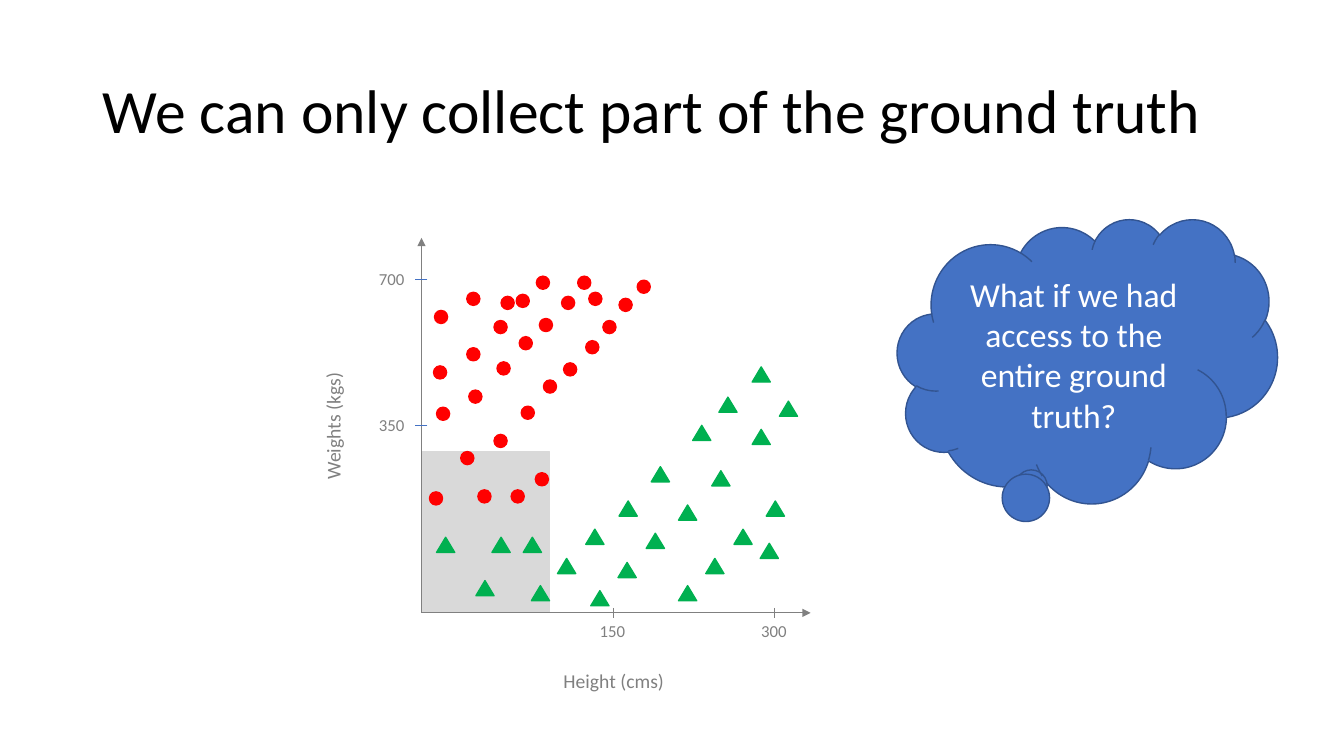
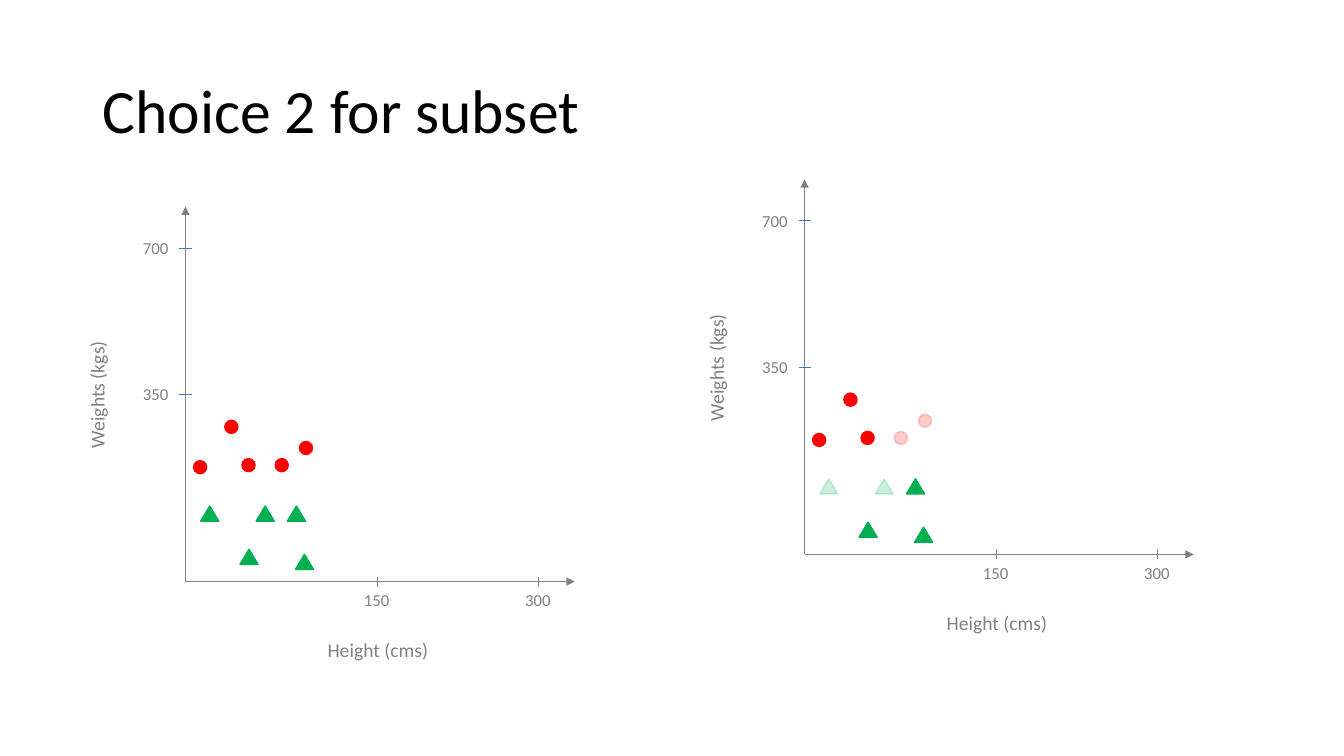
from lxml.etree import SubElement
from pptx import Presentation
from pptx.dml.color import RGBColor
from pptx.enum.shapes import MSO_CONNECTOR, MSO_SHAPE
from pptx.enum.text import MSO_ANCHOR, PP_ALIGN
from pptx.oxml.ns import qn
from pptx.util import Inches, Pt

COLOURS = {
    "title": "000000", "axis": "808080", "tick": "4472C4", "region": "D9D9D9",
    "red": "FF0000", "green": "00B050", "cloud": "4472C4", "cloud_edge": "325491",
    "cloud_text": "FFFFFF",
}
FONT = "Calibri"
MARKERS = {
    "red": (MSO_SHAPE.OVAL, 0.13, 0.13),
    "green": (MSO_SHAPE.ISOSCELES_TRIANGLE, 0.18, 0.15),
}
AXIS_LINES = [
    (0, 0, 0, 3.72, "axis", True),
    (0, 0, 3.86, 0, "axis", True),
    (3.5, 0.05, 3.5, -0.05, "axis", False),
    (1.9, 0.05, 1.9, -0.05, "axis", False),
    (0.06, 3.31, -0.06, 3.31, "tick", False),
    (0.06, 1.86, -0.06, 1.86, "tick", False),
]
AXIS_LABELS = [
    ("Height (cms)", 1.31, -0.51, 1.21, 0.34, 14, 0),
    ("Weights (kgs)", -1.51, 2.03, 1.27, 0.34, 14, 270),
    ("300", 3.27, -0.03, 0.46, 0.3, 12, 0),
    ("150", 1.67, -0.03, 0.46, 0.3, 12, 0),
    ("700", -0.52, 3.46, 0.46, 0.3, 12, 0),
    ("350", -0.52, 2.01, 0.46, 0.3, 12, 0),
]
SUBSET = {
    "red": [(0.39, 1.6), (0.08, 1.2), (0.56, 1.22), (0.89, 1.22), (1.13, 1.39)],
    "green": [(1.09, 0.27), (0.54, 0.32), (0.7, 0.75), (0.15, 0.75), (1.01, 0.75)],
}
BEYOND = {
    "red": [
        (1.66, 3.18), (0.79, 3.14), (2.14, 3.3), (1.96, 3.12), (1.8, 2.9), (1.63, 2.7),
        (1.41, 2.48), (1.21, 2.31), (0.99, 2.05), (0.72, 1.77), (0.15, 2.04), (1.55, 3.34),
        (1.39, 3.14), (1.17, 2.92), (0.97, 2.74), (0.75, 2.49), (0.47, 2.21), (0.12, 2.45),
        (1.14, 3.34), (0.94, 3.16), (0.72, 2.9), (0.45, 2.63), (0.13, 3), (0.45, 3.18),
    ],
    "green": [
        (3.36, 0.69), (1.35, 0.54), (1.63, 0.83), (1.96, 1.11), (2.28, 1.45), (2.69, 1.86),
        (2.95, 2.14), (3.28, 2.44), (1.68, 0.22), (1.95, 0.5), (2.23, 0.79), (2.55, 1.07),
        (2.88, 1.41), (3.28, 1.82), (3.55, 2.1), (2.55, 0.27), (2.82, 0.54), (3.1, 0.83),
        (3.42, 1.11),
    ],
}
TRUTH = {colour: SUBSET[colour] + BEYOND[colour] for colour in SUBSET}
LEFT_OUT = {"red": [(0.89, 1.22), (1.13, 1.39)], "green": [(0.7, 0.75), (0.15, 0.75)]}


def add_label(shapes, text, left, top, width, height, size, colour):
    label = shapes.add_textbox(Inches(left), Inches(top), Inches(width), Inches(height))
    label.text_frame.text = text
    paragraph = label.text_frame.paragraphs[0]
    paragraph.font.name = FONT
    paragraph.font.size = Pt(size)
    paragraph.font.color.rgb = RGBColor.from_string(COLOURS[colour])
    return label


def add_plot(slide, x0, y0, points, faded):
    shapes = slide.shapes.add_group_shape().shapes
    for x1, y1, x2, y2, colour, arrow in AXIS_LINES:
        axis = shapes.add_connector(
            MSO_CONNECTOR.STRAIGHT,
            Inches(x0 + x1), Inches(y0 - y1), Inches(x0 + x2), Inches(y0 - y2),
        )
        axis.line.color.rgb = RGBColor.from_string(COLOURS[colour])
        axis.line.width = Pt(0.5)
        if arrow:
            SubElement(axis.line._get_or_add_ln(), qn("a:tailEnd"), type="triangle")
        SubElement(axis._element.spPr, qn("a:effectLst"))
    for text, x, y, width, height, size, rotation in AXIS_LABELS:
        label = add_label(shapes, text, x0 + x, y0 - y, width, height, size, "axis")
        label.text_frame.word_wrap = False
        label.rotation = rotation
    for colour, places in points.items():
        preset, width, height = MARKERS[colour]
        for x, y in places:
            marker = shapes.add_shape(
                preset, Inches(x0 + x), Inches(y0 - y), Inches(width), Inches(height)
            )
            marker.shadow.inherit = False
            marker.fill.solid()
            marker.fill.fore_color.rgb = RGBColor.from_string(COLOURS[colour])
            marker.line.color.rgb = RGBColor.from_string(COLOURS[colour])
            marker.line.width = Pt(1)
            if (x, y) in faded.get(colour, []):
                for tint in marker._element.spPr.iter(qn("a:srgbClr")):
                    SubElement(tint, qn("a:alpha"), val="20000")


prs = Presentation()
prs.slide_width = Inches(13.33)
prs.slide_height = Inches(7.5)

slides = []
for heading in ["We can only collect part of the ground truth", "Choice 2 for subset"]:
    slide = prs.slides.add_slide(prs.slide_layouts[6])
    title = add_label(slide.shapes, heading, 0.92, 0.4, 11.5, 1.45, 44, "title")
    title.text_frame.word_wrap = True
    title.text_frame.vertical_anchor = MSO_ANCHOR.MIDDLE
    title.text_frame.paragraphs[0].line_spacing = 0.9
    slides.append(slide)
truth_slide, choice_slide = slides

region = truth_slide.shapes.add_shape(
    MSO_SHAPE.RECTANGLE, Inches(4.18), Inches(4.48), Inches(1.27), Inches(1.6)
)
region.shadow.inherit = False
region.fill.solid()
region.fill.fore_color.rgb = RGBColor.from_string(COLOURS["region"])
region.line.color.rgb = RGBColor.from_string(COLOURS["region"])
region.line.width = Pt(1)

add_plot(truth_slide, 4.18, 6.08, TRUTH, {})

cloud = truth_slide.shapes.add_shape(
    MSO_SHAPE.CLOUD_CALLOUT, Inches(8.9), Inches(2.17), Inches(3.77), Inches(2.82)
)
cloud.adjustments[0] = -0.15
cloud.adjustments[1] = 0.447
cloud.shadow.inherit = False
cloud.fill.solid()
cloud.fill.fore_color.rgb = RGBColor.from_string(COLOURS["cloud"])
cloud.line.color.rgb = RGBColor.from_string(COLOURS["cloud_edge"])
cloud.line.width = Pt(1)
cloud.text_frame.text = "What if we had access to the entire ground truth?"
cloud.text_frame.word_wrap = True
cloud.text_frame.vertical_anchor = MSO_ANCHOR.MIDDLE
question = cloud.text_frame.paragraphs[0]
question.alignment = PP_ALIGN.CENTER
question.font.name = FONT
question.font.size = Pt(24)
question.font.color.rgb = RGBColor.from_string(COLOURS["cloud_text"])

add_plot(choice_slide, 7.98, 5.5, SUBSET, LEFT_OUT)
add_plot(choice_slide, 1.84, 5.77, SUBSET, {})

prs.save("out.pptx")
